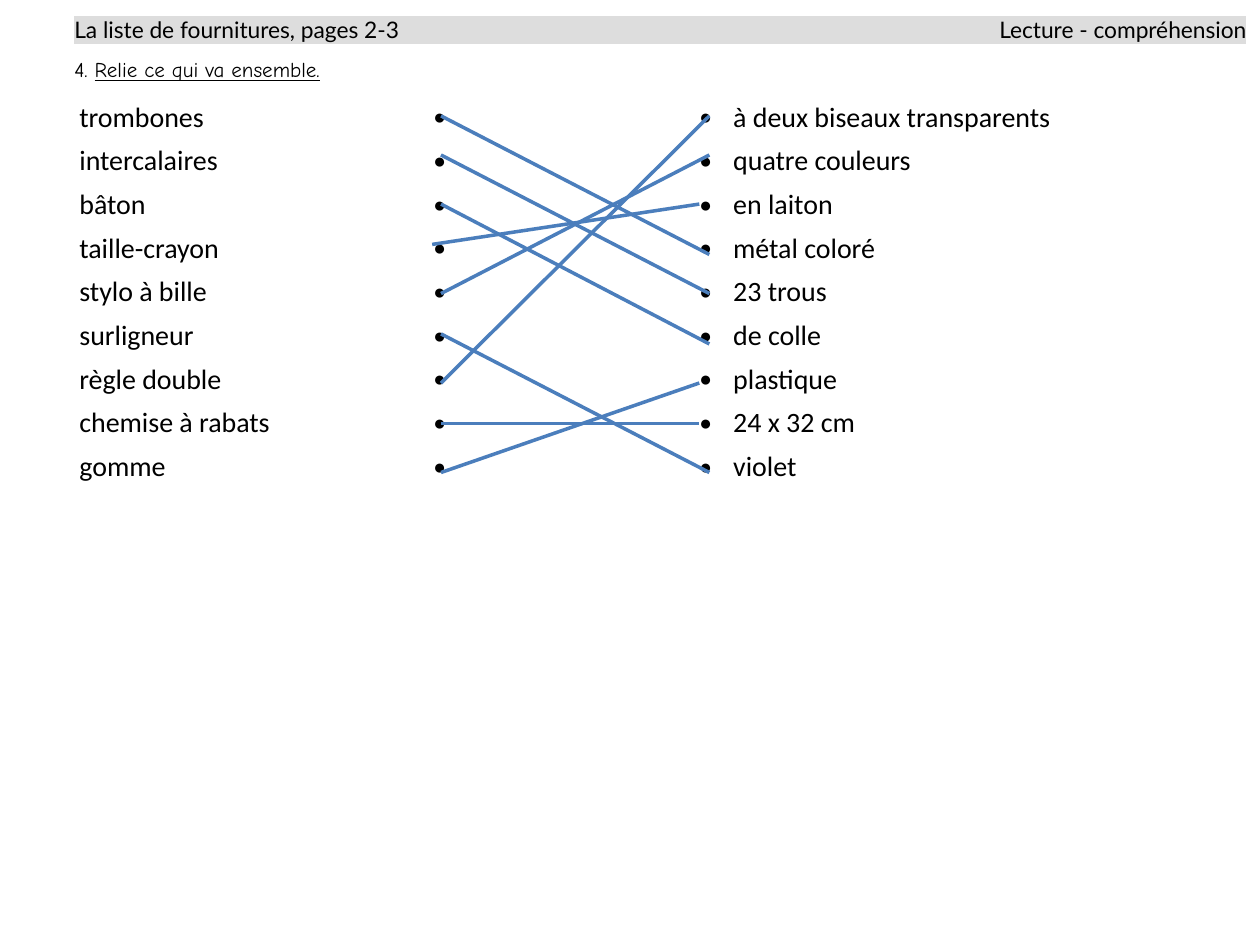
"""Build a French reading worksheet where words are joined to their matches."""
from dataclasses import dataclass

from lxml.etree import SubElement
from pptx import Presentation
from pptx.dml.color import RGBColor
from pptx.enum.shapes import MSO_CONNECTOR as Connector
from pptx.enum.text import MSO_ANCHOR as Anchor, MSO_AUTO_SIZE as AutoSize, PP_ALIGN as Align
from pptx.oxml.ns import qn
from pptx.slide import Slide
from pptx.util import Inches, Pt

PLAIN_TABLE = "{2D5ABB26-0587-4C30-8999-92F81FD0307C}"

PAIRS = [
    ("trombones", "à deux biseaux transparents"),
    ("intercalaires", "quatre couleurs"),
    ("bâton", "en laiton"),
    ("taille-crayon", "métal coloré"),
    ("stylo à bille", "23 trous"),
    ("surligneur", "de colle"),
    ("règle double", "plastique"),
    ("chemise à rabats", "24 x 32 cm"),
    ("gomme", "violet"),
]

ANSWERS = [
    (3.5, 0.92, 5.63, 2.02),
    (3.5, 1.23, 5.63, 2.33),
    (3.5, 1.62, 5.63, 2.73),
    (3.43, 1.94, 5.55, 1.62),
    (3.5, 2.33, 5.63, 1.23),
    (3.5, 2.65, 5.63, 3.75),
    (3.5, 3.04, 5.63, 0.92),
    (3.5, 3.36, 5.55, 3.36),
    (3.5, 3.75, 5.55, 3.04),
]


def color(code):
    return RGBColor.from_string(code)


def write(paragraph, text, size=16, font="Calibri", ink="000000", underline=False, align=Align.LEFT):
    paragraph.alignment = align
    run = paragraph.add_run()
    run.text = text
    run.font.size = Pt(size)
    run.font.name = font
    run.font.underline = underline
    run.font.color.rgb = color(ink)


@dataclass
class Worksheet:
    slide: Slide
    left: float = 0.59
    band: str = "DDDDDD"
    answer: str = "4B7EBC"

    def table(self, top, height, widths, row_count):
        frame = self.slide.shapes.add_table(
            row_count, len(widths), Inches(self.left), Inches(top), Inches(sum(widths)), Inches(height)
        )
        grid = frame.table
        grid.first_row = grid.horz_banding = False
        grid._tbl.tblPr.find(qn("a:tableStyleId")).text = PLAIN_TABLE
        for column, width in zip(grid.columns, widths):
            column.width = Inches(width)
        for cell in grid.iter_cells():
            cell.margin_left = cell.margin_right = cell.margin_top = cell.margin_bottom = 0
            cell.fill.background()
        return grid

    def header(self, lesson, skill):
        grid = self.table(0.13, 0.22, [4.65, 4.65], 1)
        for cell, label, align in zip(grid.iter_cells(), (lesson, skill), (Align.LEFT, Align.RIGHT)):
            cell.fill.solid()
            cell.fill.fore_color.rgb = color(self.band)
            write(cell.text_frame.paragraphs[0], label, size=13, font="Lato", align=align)

    def instruction(self, number, task):
        title = self.slide.shapes.title
        title.left, title.top = Inches(self.left), Inches(0.45)
        title.width, title.height = Inches(9.41), Inches(0.47)
        frame = title.text_frame
        frame.margin_left = frame.margin_right = frame.margin_top = frame.margin_bottom = 0
        frame.auto_size = AutoSize.NONE
        frame.vertical_anchor = Anchor.TOP
        write(frame.paragraphs[0], number, size=12, font="Comic Neue")
        write(frame.paragraphs[0], task, size=12, font="Comic Neue", underline=True)

    def matching(self, pairs):
        grid = self.table(0.76, 3.12, [2.81, 0.31, 1.8, 0.27, 3.79], len(pairs))
        for row, (word, match) in enumerate(pairs):
            for column, label in ((0, word), (1, "●"), (3, "●"), (4, match)):
                cell = grid.cell(row, column)
                cell.margin_left = cell.margin_right = Inches(0.04)
                cell.vertical_anchor = Anchor.MIDDLE
                style = {"size": 12, "font": "Arial"} if label == "●" else {}
                write(cell.text_frame.paragraphs[0], label, align=Align.JUSTIFY, **style)

    def link(self, *ends):
        line = self.slide.shapes.add_connector(Connector.STRAIGHT, *map(Inches, ends))
        line.line.color.rgb = color(self.answer)
        line.line.width = Pt(2)
        SubElement(line._element.spPr, qn("a:effectLst"))


def main():
    deck = Presentation()
    deck.slide_width, deck.slide_height = Inches(10), Inches(7.5)
    sheet = Worksheet(deck.slides.add_slide(deck.slide_layouts[5]))
    sheet.header("La liste de fournitures, pages 2-3", "Lecture - compréhension")
    sheet.instruction("4. ", "Relie ce qui va ensemble.")
    sheet.matching(PAIRS)
    for ends in ANSWERS:
        sheet.link(*ends)
    deck.save("out.pptx")


if __name__ == "__main__":
    main()
